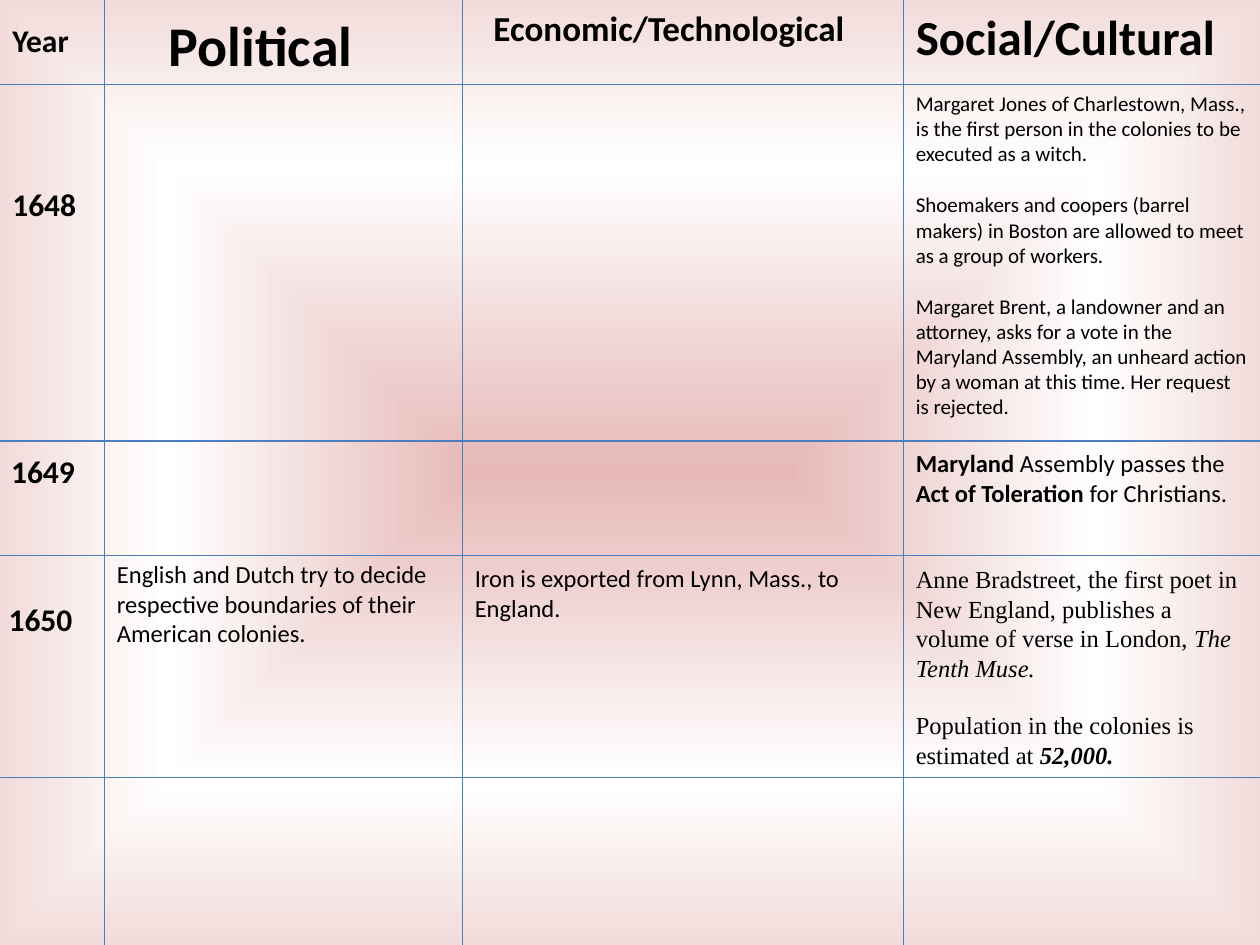
"""Build a colonial timeline slide, 1648 to 1650, on a ruled grid."""
from itertools import pairwise

from pptx import Presentation
from pptx.dml.color import RGBColor
from pptx.enum.shapes import MSO_CONNECTOR
from pptx.enum.text import PP_ALIGN as Align
from pptx.oxml import parse_xml
from pptx.oxml.ns import nsdecls, qn
from pptx.util import Inches, Pt

WIDTH, HEIGHT = 10, 7.5
COLUMNS = [0, 0.83, 3.67, 7.17, WIDTH]
ROWS = [0, 0.67, 3.5, 4.41, 6.17, HEIGHT]
BLACK = RGBColor(0x00, 0x00, 0x00)
RULE_BLUE = RGBColor(0x4B, 0x7E, 0xBC)
BACKGROUND = [
    (0, RGBColor(0xE6, 0xB9, 0xB8)),
    (65, RGBColor(0xFF, 0xFF, 0xFF)),
    (100, RGBColor(0xF2, 0xDC, 0xDB)),
]

HEADINGS = [
    ("Political", 1, -0.28, 0.94, dict(size=32, align=Align.CENTER, inset_top=0.36, inset_right=0.46)),
    ("Economic/Technological", 2, 0, 0.44, dict(size=20, align=Align.CENTER, inset_right=0.32)),
    ("Social/Cultural", 3, 0, 1.04, dict(size=28)),
]
YEARS = [("Year", 0, 0.12, 0.4), ("1648", 0, 1.42, 0.71),
         ("1649", -0.01, 3.54, 0.71), ("1650", -0.03, 4.71, 0.71)]
EVENTS = [
    (3, 0.67, 3.03, dict(size=12, gap=14.65), [
        [("Margaret Jones of Charlestown, Mass., is the first person in the "
          "colonies to be executed as a witch.", "")],
        [("Shoemakers and coopers (barrel makers) in Boston are allowed to "
          "meet as a group of workers.", "")],
        [("Margaret Brent, a landowner and an attorney, asks for a vote in the "
          "Maryland Assembly, an unheard action by a woman at this time. "
          "Her request is rejected.", "")],
    ]),
    (3, 3.51, 0.88, dict(size=14), [
        [("Maryland ", "b"), ("Assembly passes the ", ""),
         ("Act of Toleration ", "b"), ("for Christians.", "")],
    ]),
    (1, 4.39, 1.04, dict(size=14), [
        [("English and Dutch try to decide respective boundaries of their "
          "American colonies.", "")],
    ]),
    (2, 4.42, 0.88, dict(size=14), [
        [("Iron is exported from Lynn, Mass., to England.", "")],
    ]),
    (3, 4.43, 2.05, dict(size=14, font="Times New Roman", gap=16.1), [
        [("Anne Bradstreet, the first poet in New England, publishes a volume "
          "of verse in London, ", ""), ("The Tenth Muse.", "i")],
        [("Population in the colonies is estimated at ", ""), ("52,000.", "bi")],
    ]),
]


def paint_background(slide):
    stops = "".join(f'<a:gs pos="{share * 1000}"><a:srgbClr val="{color}"/></a:gs>'
                    for share, color in BACKGROUND)
    slide.element.cSld.insert(0, parse_xml(
        f'<p:bg {nsdecls("p", "a")}><p:bgPr><a:gradFill><a:gsLst>{stops}</a:gsLst>'
        '<a:path path="shape"><a:fillToRect l="50000" t="50000" r="50000" b="50000"/>'
        '</a:path></a:gradFill><a:effectLst/></p:bgPr></p:bg>'))


def add_rule(slide, *ends):
    rule = slide.shapes.add_connector(MSO_CONNECTOR.STRAIGHT, *map(Inches, ends))
    rule.line.color.rgb = RULE_BLUE
    rule.line.width = Pt(0.75)
    rule.element.spPr.append(rule.element.makeelement(qn("a:effectLst"), {}))


def add_text(slide, paragraphs, bounds, *, size, font="Calibri", align=Align.LEFT,
             gap=0, inset_top=0.05, inset_right=0.1):
    frame = slide.shapes.add_textbox(*map(Inches, bounds)).text_frame
    frame.word_wrap = True
    frame.margin_top, frame.margin_right = Inches(inset_top), Inches(inset_right)
    for index, runs in enumerate(paragraphs):
        para = frame.add_paragraph() if index else frame.paragraphs[0]
        para.alignment = align
        para.space_before = Pt(gap if index else 0)
        for text, style in runs:
            span = para.add_run()
            span.text = text
            span.font.name, span.font.size = font, Pt(size)
            span.font.color.rgb = BLACK
            span.font.bold, span.font.italic = "b" in style, "i" in style


def main():
    deck = Presentation()
    deck.slide_width, deck.slide_height = Inches(WIDTH), Inches(HEIGHT)
    slide = deck.slides.add_slide(deck.slide_layouts[6])
    paint_background(slide)
    for x in COLUMNS[1:-1]:
        add_rule(slide, x, 0, x, HEIGHT)
    for y in ROWS[1:-1]:
        add_rule(slide, 0, y, WIDTH, y)

    spans = [(left, right - left) for left, right in pairwise(COLUMNS)]
    for text, column, top, height, style in HEADINGS:
        left, width = spans[column]
        add_text(slide, [[(text, "b")]], (left, top, width, height), **style)
    for text, left, top, height in YEARS:
        add_text(slide, [[(text, "b")]], (left, top, COLUMNS[1] - left, height), size=18)
    for column, top, height, style, paragraphs in EVENTS:
        left, width = spans[column]
        add_text(slide, paragraphs, (left, top, width, height), **style)
    deck.save("out.pptx")


if __name__ == "__main__":
    main()
